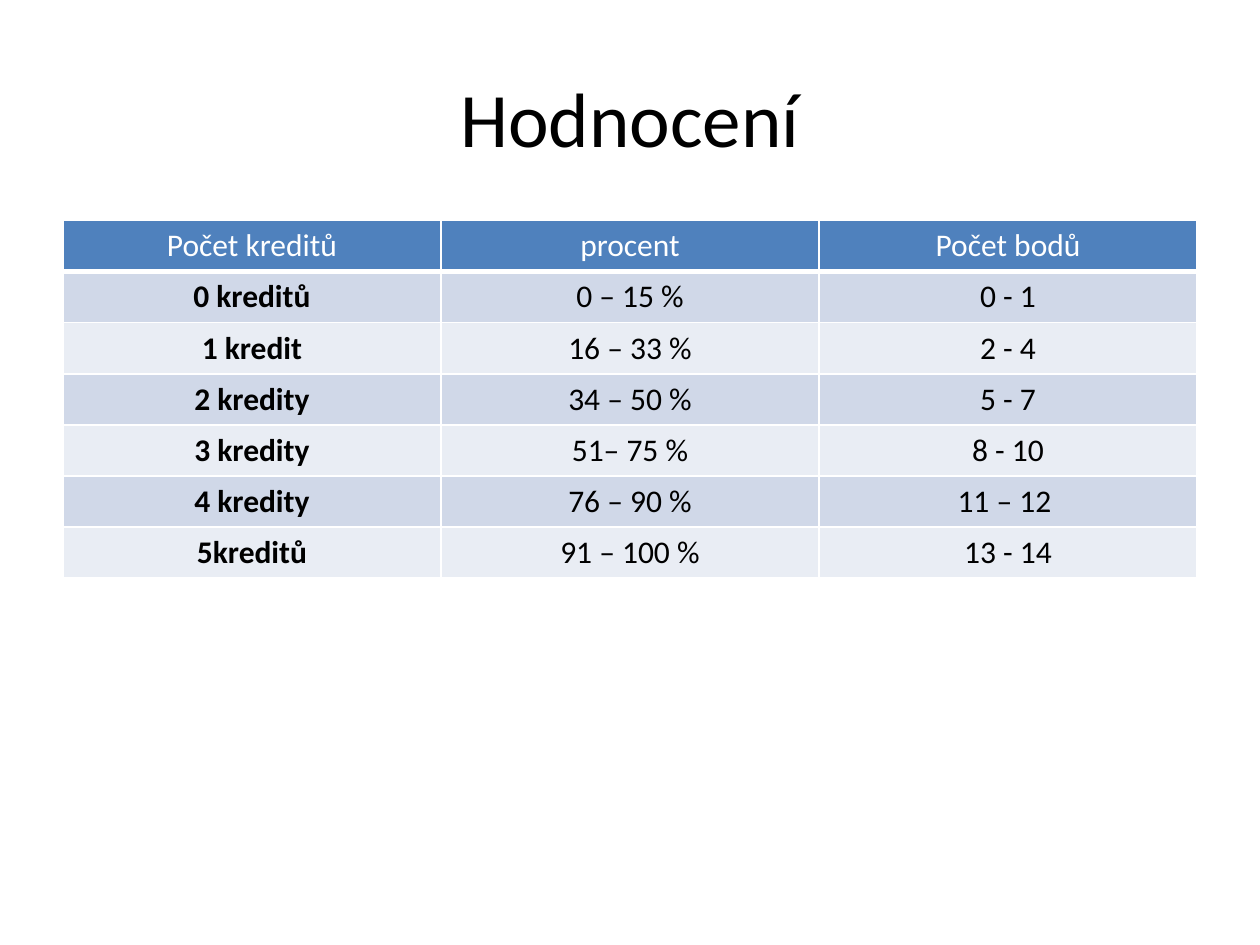
"""Build the grading slide: a title above a table of credits, percentages and points."""

from dataclasses import dataclass
from typing import NamedTuple

from lxml import etree
from pptx import Presentation
from pptx import util as u
from pptx.dml.color import RGBColor
from pptx.enum import text
from pptx.oxml.ns import qn


@dataclass(frozen=True)
class Theme:
    font: str = "Calibri"
    title_size: int = 44
    body_size: int = 18
    ink: str = "000000"
    paper: str = "FFFFFF"
    header: str = "4F81BD"
    bands: tuple[str, str] = ("D0D8E8", "E9EDF4")
    rule: float = 1
    header_rule: float = 3


class Grade(NamedTuple):
    credits: str
    percent: str
    points: str


THEME = Theme()
HEADINGS = Grade("Počet kreditů", "procent", "Počet bodů")
GRADES = [
    Grade("0 kreditů", "0 – 15 %", "0 - 1"),
    Grade("1 kredit", "16 – 33 %", "2 - 4"),
    Grade("2 kredity", "34 – 50 %", "5 - 7"),
    Grade("3 kredity", "51– 75 %", "8 - 10"),
    Grade("4 kredity", "76 – 90 %", "11 – 12 "),
    Grade("5kreditů", "91 – 100 %", "13 - 14"),
]
LEFT, WIDTH = 0.5, 9
TABLE_TOP, TABLE_HEIGHT = 1.75, 2.84


def write(frame, wording: str, size: int, color: str, bold: bool = False) -> None:
    """Put one centred, formatted paragraph into a text frame."""
    frame.text = wording
    paragraph = frame.paragraphs[0]
    paragraph.alignment = text.PP_ALIGN.CENTER
    font = paragraph.runs[0].font
    font.name, font.size, font.bold = THEME.font, u.Pt(size), bold
    font.color.rgb = RGBColor.from_string(color)


def add_borders(cell, bottom: float) -> None:
    """Give a cell white borders, with its own bottom width in points."""
    properties = cell._tc.get_or_add_tcPr()
    widths = {"lnL": THEME.rule, "lnR": THEME.rule, "lnT": THEME.rule, "lnB": bottom}
    for side, width in widths.items():
        line = etree.SubElement(properties, qn(f"a:{side}"), w=str(u.Pt(width)))
        fill = etree.SubElement(line, qn("a:solidFill"))
        etree.SubElement(fill, qn("a:srgbClr"), val=THEME.paper)


def add_title(slide, wording: str) -> None:
    """Place and format the title placeholder."""
    title = slide.shapes.title
    title.left, title.top = u.Inches(LEFT), u.Inches(0.3)
    title.width, title.height = u.Inches(WIDTH), u.Inches(1.25)
    title.text_frame.vertical_anchor = text.MSO_ANCHOR.MIDDLE
    write(title.text_frame, wording, THEME.title_size, THEME.ink)


def add_grades(slide, headings: Grade, grades: list[Grade]) -> None:
    """Draw the grading table with a header and banded rows."""
    rows = [headings, *grades]
    table = slide.shapes.add_table(
        len(rows), len(headings), u.Inches(LEFT), u.Inches(TABLE_TOP),
        u.Inches(WIDTH), u.Inches(TABLE_HEIGHT),
    ).table
    for row_index, grade in enumerate(rows):
        is_header = row_index == 0
        fill = THEME.header if is_header else THEME.bands[(row_index - 1) % 2]
        color = THEME.paper if is_header else THEME.ink
        for column_index, wording in enumerate(grade):
            cell = table.cell(row_index, column_index)
            add_borders(cell, THEME.header_rule if is_header else THEME.rule)
            cell.fill.solid()
            cell.fill.fore_color.rgb = RGBColor.from_string(fill)
            bold = not is_header and column_index == 0
            write(cell.text_frame, wording, THEME.body_size, color, bold)


def main() -> None:
    """Build and save the presentation."""
    presentation = Presentation()
    presentation.slide_width = u.Inches(10)
    presentation.slide_height = u.Inches(7.5)
    slide = presentation.slides.add_slide(presentation.slide_layouts[5])
    add_title(slide, "Hodnocení")
    add_grades(slide, HEADINGS, GRADES)
    presentation.save("out.pptx")


if __name__ == "__main__":
    main()
